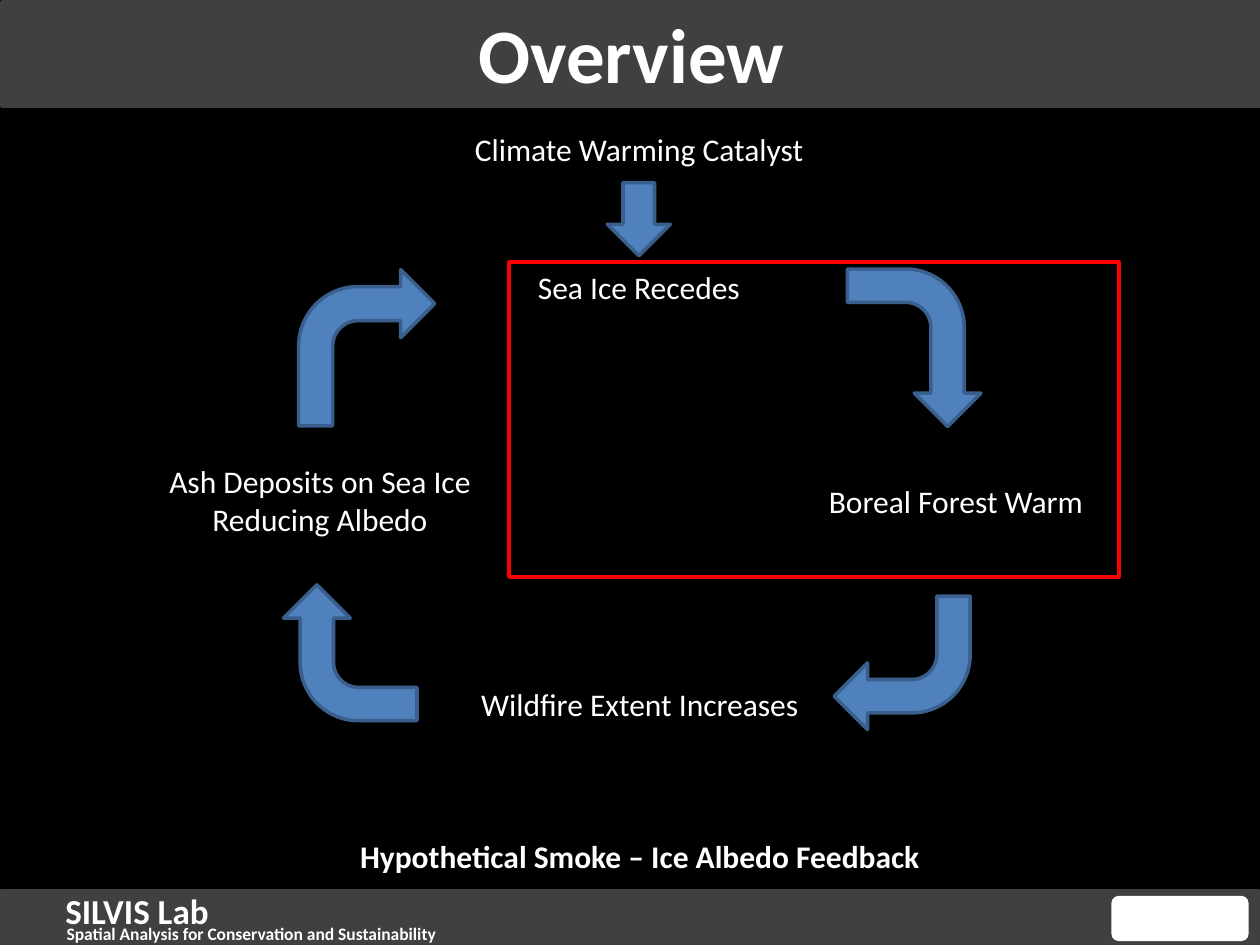
from pptx import Presentation
from pptx.dml.color import RGBColor as RGB
from pptx.enum.shapes import MSO_SHAPE as Shape
from pptx.enum.text import MSO_ANCHOR as Anchor, MSO_AUTO_SIZE as Fit, PP_ALIGN as Align
from pptx.util import Inches, Pt

COLORS = {
    "back": "000000", "bar": "404040", "text": "FFFFFF",
    "arrow": "4F81BD", "edge": "3A5F8C", "frame": "FF0000",
}
WIDE, HIGH = 10, 7.5
COLS, ROWS = 100, 75


def tint(name):
    return RGB.from_string(COLORS[name])


class Page:
    """Holds the style and the slide; lengths are grid columns and rows."""

    face = "Calibri"

    def __init__(self, deck):
        deck.slide_width, deck.slide_height = Inches(WIDE), Inches(HIGH)
        self.slide = deck.slides.add_slide(deck.slide_layouts[5])
        back = self.slide.background.fill
        back.solid()
        back.fore_color.rgb = tint("back")

    def place(self, col, row, cols, rows):
        x, y = WIDE / COLS, HIGH / ROWS
        return [Inches(n) for n in (col * x, row * y, cols * x, rows * y)]

    def fill_text(self, frame, words, size, bold, align):
        frame.word_wrap = True
        para = frame.paragraphs[0]
        para.text = words
        para.alignment = align
        style = {"name": self.face, "size": Pt(size), "bold": bold}
        for key, value in style.items():
            setattr(para.font, key, value)
        para.font.color.rgb = tint("text")

    def title(self, words, box):
        head = self.slide.shapes.title
        spots = zip(("left", "top", "width", "height"), self.place(*box))
        for key, value in spots:
            setattr(head, key, value)
        self.fill_text(head.text_frame, words, 44, True, Align.CENTER)
        head.text_frame.vertical_anchor = Anchor.MIDDLE
        # Bring the title in front of its bar
        head.element.getparent().append(head.element)

    def label(self, words, box, size=18, bold=False, align=Align.LEFT, fit=Fit.SHAPE_TO_FIT_TEXT):
        note = self.slide.shapes.add_textbox(*self.place(*box))
        self.fill_text(note.text_frame, words, size, bold, align)
        note.text_frame.auto_size = fit

    def shape(self, kind, box, fill=None, line=None, width=2, turn=0):
        item = self.slide.shapes.add_shape(kind, *self.place(*box))
        item.shadow.inherit = False
        item.rotation = turn
        for part, name in ((item.fill, fill), (item.line.fill, line)):
            if name:
                part.solid()
                part.fore_color.rgb = tint(name)
            else:
                part.background()
        if line:
            item.line.width = Pt(width)

    def arrow(self, kind, box, turn=0):
        self.shape(kind, box, "arrow", "edge", turn=turn)


def main():
    deck = Presentation()
    page = Page(deck)

    # Header and footer bars
    for box in ((0.2, 0.2, 99.8, 8.2), (0.1, 70.8, 99.8, 4.1)):
        page.shape(Shape.RECTANGLE, box, "bar", "bar", 3)
    page.label("SILVIS Lab", (4.2, 70.1, 24.3, 4.4), 20, True)
    page.label("Spatial Analysis for Conservation and Sustainability",
               (4.3, 72.8, 49.2, 1.7), 10, True, fit=Fit.NONE)
    page.shape(Shape.ROUNDED_RECTANGLE, (88.2, 71.1, 10.9, 3.6), "text")
    page.title("Overview", (0.2, 0, 99.8, 8.3))

    # Stages of the feedback loop
    page.label("Climate Warming Catalyst", (36.7, 9.8, 28.5, 4))
    page.label("Sea Ice Recedes", (41.7, 20.8, 18.5, 4))
    page.label("Boreal Forest Warm", (64.8, 37.8, 22.5, 4))
    page.label("Wildfire Extent Increases", (37.2, 53.9, 27.5, 4))
    page.label("Ash Deposits on Sea Ice Reducing Albedo",
               (11.7, 36.2, 27.4, 7.1), align=Align.CENTER)
    page.label("Hypothetical Smoke – Ice Albedo Feedback", (27.6, 65.9, 46.7, 4), bold=True)

    # Arrows, each bend a quarter turn on from the last
    page.arrow(Shape.DOWN_ARROW, (48.2, 14.5, 5, 5.8))
    bends = (
        (23.7, 21.4, 10.8, 12.4), (66.3, 22.3, 12.5, 10.6),
        (66.2, 47.3, 10.8, 10.6), (22.4, 46.5, 10.8, 10.6),
    )
    for step, box in enumerate(bends):
        page.arrow(Shape.BENT_ARROW, box, 90 * step)

    # Frame around the part in focus
    page.shape(Shape.RECTANGLE, (40.4, 20.8, 48.4, 25), line="frame")

    deck.save("out.pptx")


if __name__ == "__main__":
    main()
